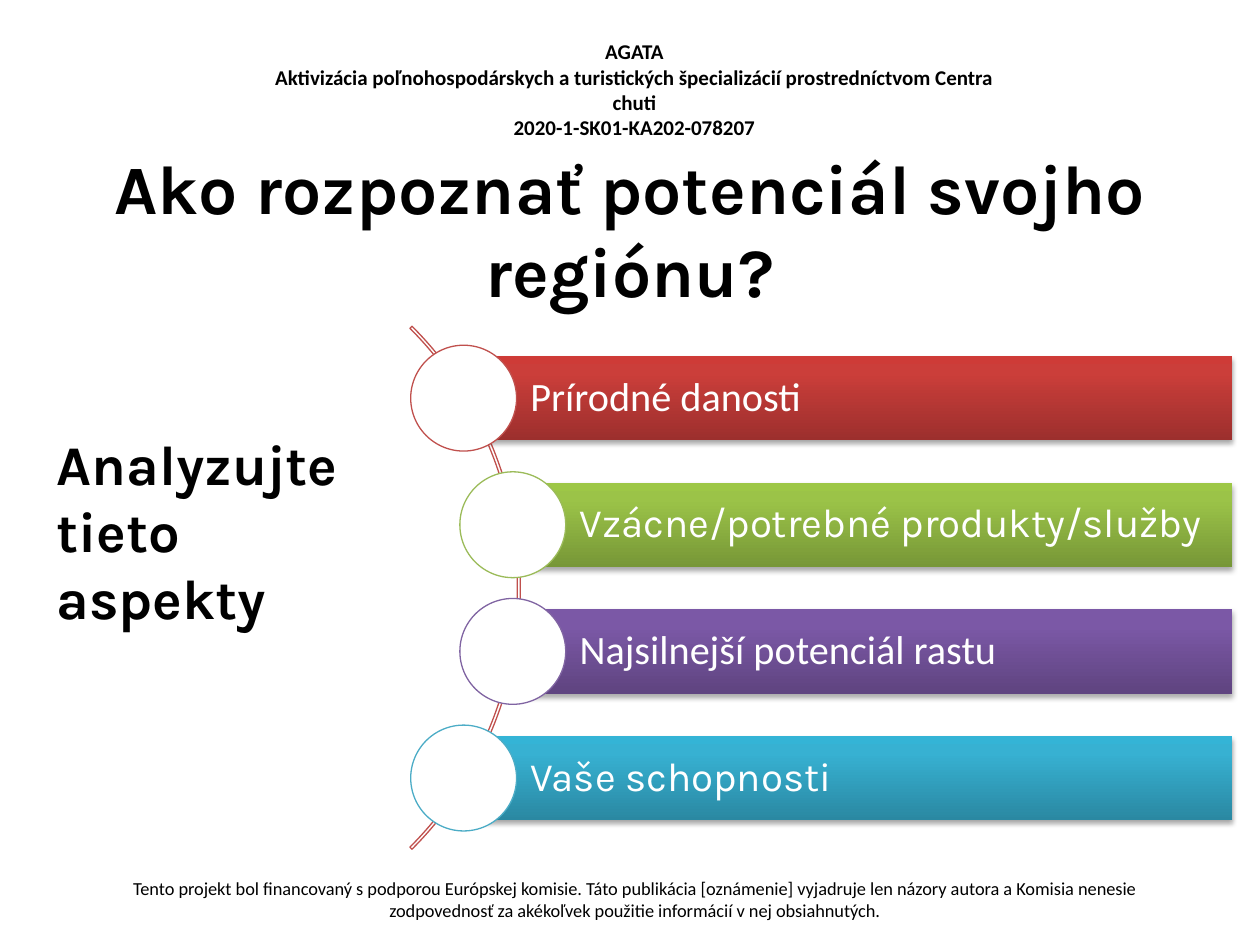
"""Build the slide on recognising the potential of a region."""
from lxml.etree import SubElement
from pptx import Presentation
from pptx.dml.color import RGBColor
from pptx.enum.shapes import MSO_SHAPE as Shape
from pptx.enum.text import MSO_ANCHOR as Anchor, PP_ALIGN as Align
from pptx.oxml import parse_xml
from pptx.oxml.ns import nsdecls, qn
from pptx.util import Inches, Pt

BLACK = RGBColor(0, 0, 0)
WHITE = RGBColor(255, 255, 255)
RED = RGBColor(0xC0, 0x50, 0x4D)
GREEN = RGBColor(0x9B, 0xBB, 0x59)
PURPLE = RGBColor(0x80, 0x64, 0xA2)
BLUE = RGBColor(0x4B, 0xAC, 0xC6)

HEADER = [
    "AGATA",
    "Aktivizácia poľnohospodárskych a turistických špecializácií prostredníctvom Centra chuti",
    "2020-1-SK01-KA202-078207",
]
FOOTER = [
    "Tento projekt bol financovaný s podporou Európskej komisie. Táto publikácia [oznámenie] "
    "vyjadruje len názory autora a Komisia nenesie zodpovednosť za akékoľvek použitie "
    "informácií v nej obsiahnutých."
]
TITLE = ["Ako rozpoznať potenciál svojho regiónu?"]
PROMPT = ["Analyzujte tieto aspekty"]

ASPECTS = [
    ("Prírodné danosti", "Calibri", 3.26, RED, ("9C2F2D", "CB3E3A", "CE3B37")),
    ("Vzácne/potrebné produkty/služby", "Karla", 3.65, GREEN, ("779737", "9BC348", "9DC746")),
    ("Najsilnejší potenciál rastu", "Calibri", 3.65, PURPLE, ("5F4480", "7B58A6", "7C57A8")),
    ("Vaše schopnosti", "Karla", 3.26, BLUE, ("2A88A2", "37B1D2", "34B4D6")),
]
STOPS = (0, 80, 100)
CIRCLE = 0.84
BAR_HEIGHT = 0.67
BAR_RIGHT = 9.78
FIRST_CENTER = 3.16
PITCH = 1.005


def format_text(paragraph, font_name, size, color, bold=False):
    font = paragraph.font
    font.name, font.size, font.bold = font_name, Pt(size), bold
    font.color.rgb = color


def add_text(slide, box, lines, font_name, size, bold, align=Align.CENTER, anchor=Anchor.TOP):
    frame = slide.shapes.add_textbox(*map(Inches, box)).text_frame
    frame.word_wrap = True
    frame.vertical_anchor = anchor
    frame.text = "\n".join(lines)
    for paragraph in frame.paragraphs:
        paragraph.alignment = align
        format_text(paragraph, font_name, size, BLACK, bold)


def add_outlined(slide, kind, box, color):
    shape = slide.shapes.add_shape(kind, *map(Inches, box))
    shape.shadow.inherit = False
    shape.line.color.rgb = color
    shape.line.width = Pt(0.75)
    return shape


def style_bar(bar, colors):
    bar.line.fill.background()
    bar.shadow.inherit = False
    properties = bar._element.spPr
    stops = "".join(
        f'<a:gs pos="{stop * 1000}"><a:srgbClr val="{color}"/></a:gs>'
        for stop, color in zip(STOPS, colors)
    )
    properties.find(qn("a:prstGeom")).addnext(parse_xml(
        f'<a:gradFill {nsdecls("a")} rotWithShape="1"><a:gsLst>{stops}</a:gsLst>'
        '<a:lin ang="16200000" scaled="0"/></a:gradFill>'
    ))
    shadow = SubElement(
        properties.find(qn("a:effectLst")), qn("a:outerShdw"),
        blurRad=str(Pt(3.1)), dist=str(Pt(1.8)), dir="5400000", rotWithShape="0",
    )
    shadow_color = SubElement(shadow, qn("a:srgbClr"), val="000000")
    SubElement(shadow_color, qn("a:alpha"), val="35000")


def add_aspect(slide, center, label, font_name, left, color, gradient):
    bar_left = left + CIRCLE / 2
    bar = slide.shapes.add_shape(Shape.RECTANGLE, *map(
        Inches, (bar_left, center - BAR_HEIGHT / 2, BAR_RIGHT - bar_left, BAR_HEIGHT)))
    style_bar(bar, gradient)
    frame = bar.text_frame
    frame.word_wrap = True
    frame.vertical_anchor = Anchor.MIDDLE
    frame.margin_left = Inches(0.53)
    frame.margin_top = frame.margin_right = frame.margin_bottom = Inches(0.06)
    frame.text = label
    paragraph = frame.paragraphs[0]
    paragraph.alignment = Align.LEFT
    paragraph.line_spacing = 0.9
    format_text(paragraph, font_name, 23, WHITE)

    circle = add_outlined(slide, Shape.OVAL, (left, center - CIRCLE / 2, CIRCLE, CIRCLE), color)
    circle.fill.solid()
    circle.fill.fore_color.rgb = WHITE


def main():
    presentation = Presentation()
    presentation.slide_width, presentation.slide_height = Inches(10), Inches(7.5)
    slide = presentation.slides.add_slide(presentation.slide_layouts[6])

    add_text(slide, (2.08, 0.26, 5.91, 0.71), HEADER, "Calibri", 12, True)
    add_text(slide, (0.54, 6.91, 9, 0.47), FOOTER, "Calibri", 10.5, False)
    add_text(slide, (0.5, 1.12, 9, 1.38), TITLE, "Karla", 39.6, True, anchor=Anchor.MIDDLE)
    add_text(slide, (0.35, 3.36, 2.83, 1.94), PROMPT, "Karla", 32, True, align=Align.LEFT)

    arc = add_outlined(slide, Shape.BLOCK_ARC, (-1.74, 1.73, 5.87, 5.87), RED)
    arc.fill.background()
    for index, value in enumerate((189, 27, 0.004)):
        arc.adjustments[index] = value

    for index, aspect in enumerate(ASPECTS):
        add_aspect(slide, FIRST_CENTER + index * PITCH, *aspect)

    presentation.save("out.pptx")


if __name__ == "__main__":
    main()
